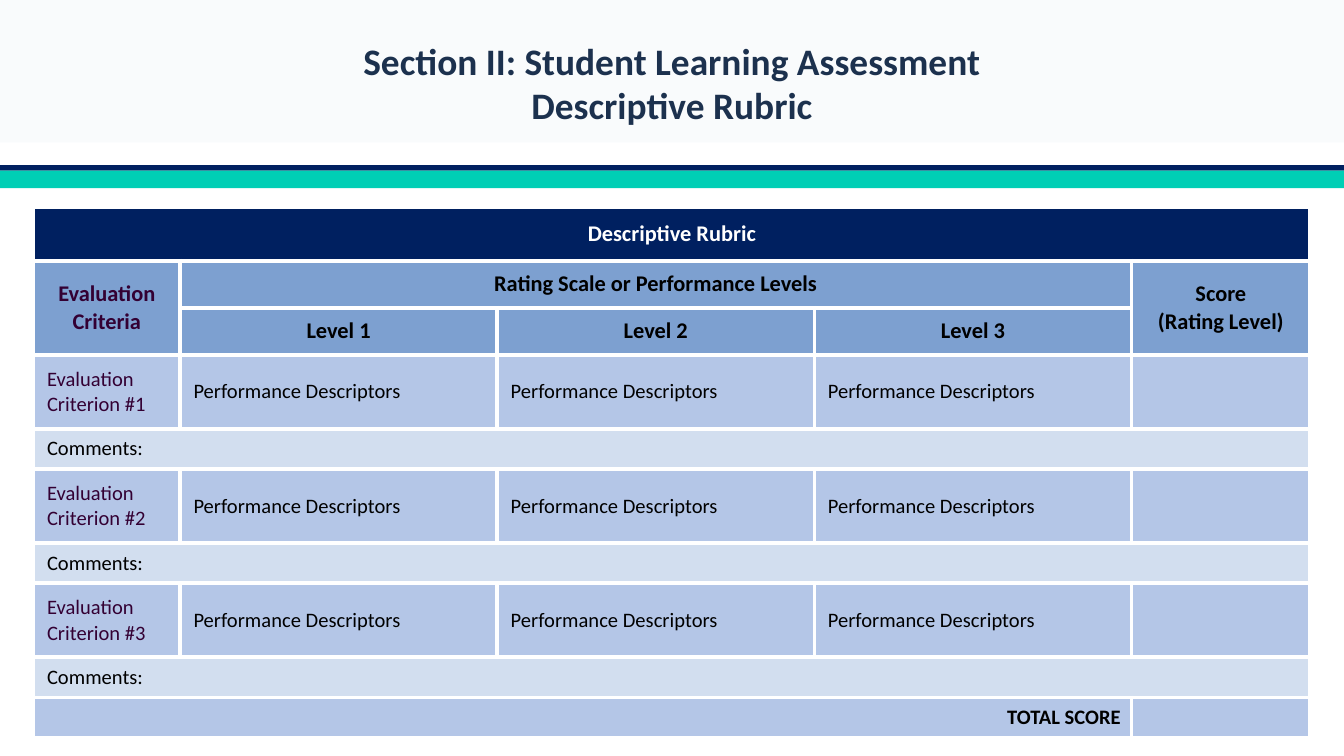
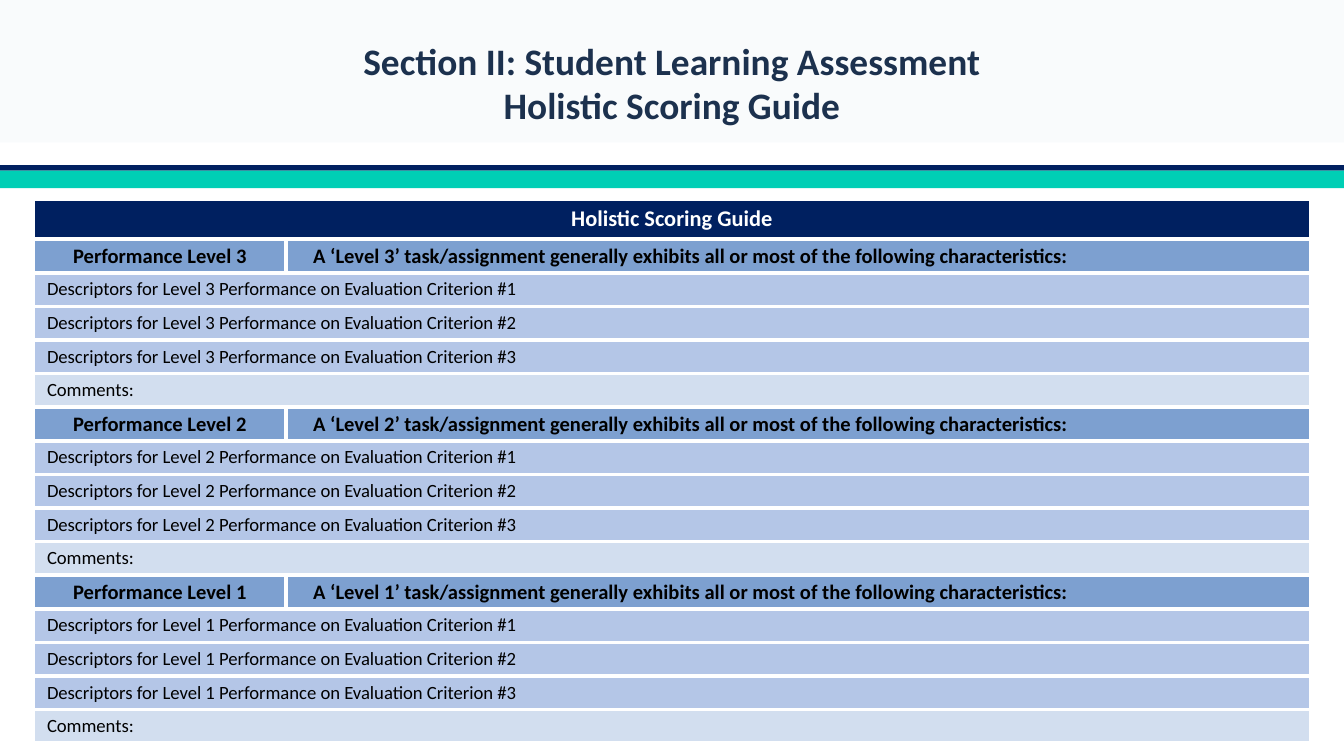
from dataclasses import dataclass
from lxml.etree import SubElement
from pptx import Presentation
from pptx.dml.color import RGBColor as RGB
from pptx.enum.shapes import MSO_SHAPE as SHAPE
from pptx.enum.text import MSO_ANCHOR as ANCHOR, PP_ALIGN as ALIGN
from pptx.oxml.ns import qn
from pptx.util import Inches, Pt


@dataclass(frozen=True)
class Theme:
    font: str = "Calibri"
    navy: str = "002060"
    teal: str = "00CFB5"
    mist: str = "E8F0F4"
    white: str = "FFFFFF"
    black: str = "000000"
    title: str = "1C314E"
    plum: str = "330033"
    head: str = "7DA0D0"
    body: str = "B4C6E7"
    note: str = "D2DEEF"
    title_size: int = 20
    head_size: int = 12
    body_size: int = 11
    small_size: int = 10
    border: float = 2.25


T = Theme()
HEAD_INS = (0.07, 0, 0.07, 0)
LABEL_INS = (0.1, 0, 0.08, 0)
DESC_INS = (0.05, 0.05, 0.05, 0.05)


def write(tf, text, size=T.body_size, color=T.black, bold=False, align=ALIGN.LEFT, indent=0):
    for i, line in enumerate(text.split("\n")):
        p = tf.add_paragraph() if i else tf.paragraphs[0]
        p.alignment = align
        if indent:
            p._p.get_or_add_pPr().set("marL", str(Inches(indent)))
        r = p.add_run()
        r.text = line
        r.font.name = T.font
        r.font.size = Pt(size)
        r.font.bold = bold
        r.font.color.rgb = RGB.from_string(color)


def fill_cell(cell, text, fill, ins=LABEL_INS, to=None, **fmt):
    if to is not None:
        cell.merge(to)
    cell.fill.solid()
    cell.fill.fore_color.rgb = RGB.from_string(fill)
    cell.vertical_anchor = ANCHOR.MIDDLE
    cell.margin_left, cell.margin_top, cell.margin_right, cell.margin_bottom = map(Inches, ins)
    write(cell.text_frame, text, **fmt)


prs = Presentation()
prs.slide_width = Inches(10)
prs.slide_height = Inches(10) * 9 // 16

bands = [
    (1.23, 0.23, T.navy, None),
    (1.27, 4.36, T.white, None),
    (1.27, 0.13, T.teal, None),
    (0, 1.06, T.mist, 25),
]
pages = [
    ("Descriptive Rubric", 1.54, [1.09] + [2.36] * 3 + [1.33],
     [0.4, 0.35, 0.35] + [0.55, 0.3] * 3 + [0.3]),
    ("Holistic Scoring Guide", 1.48, [1.88, 7.62], [0.3] + [0.25] * 15),
]
tables = []

for name, top, cols, rows in pages:
    s = prs.slides.add_slide(prs.slide_layouts[6])
    for y, h, color, alpha in bands:
        sp = s.shapes.add_shape(SHAPE.RECTANGLE, 0, Inches(y), Inches(10), Inches(h))
        sp.shadow.inherit = False
        sp.line.fill.background()
        sp.fill.solid()
        sp.fill.fore_color.rgb = RGB.from_string(color)
        if alpha:
            clr = sp._element.spPr.find(qn("a:solidFill"))[0]
            SubElement(clr, qn("a:alpha"), val=str(alpha * 1000))

    tbl = s.shapes.add_table(len(rows), len(cols), Inches(0.25), Inches(top),
                             Inches(sum(cols)), Inches(sum(rows))).table
    tbl.first_row = tbl.horz_banding = False
    for col, w in zip(tbl.columns, cols):
        col.width = Inches(w)
    for row, h in zip(tbl.rows, rows):
        row.height = Inches(h)
    for cell in tbl.iter_cells():
        tcPr = cell._tc.get_or_add_tcPr()
        for side in ("lnL", "lnR", "lnT", "lnB"):
            ln = SubElement(tcPr, qn(f"a:{side}"), w=str(Pt(T.border)))
            SubElement(SubElement(ln, qn("a:solidFill")), qn("a:srgbClr"), val=T.white)
    fill_cell(tbl.cell(0, 0), name, T.navy, HEAD_INS, tbl.cell(0, len(cols) - 1),
              size=T.head_size, color=T.white, bold=True, align=ALIGN.CENTER)
    tables.append(tbl)

    tf = s.shapes.add_textbox(0, 0, Inches(10), Inches(1.23)).text_frame
    tf.word_wrap = True
    tf.vertical_anchor = ANCHOR.MIDDLE
    tf.margin_left = tf.margin_top = tf.margin_right = tf.margin_bottom = 0
    write(tf, f"Section II: Student Learning Assessment\n{name}", size=T.title_size,
          color=T.title, bold=True, align=ALIGN.CENTER)

rubric, guide = tables

head = dict(size=T.head_size, bold=True, align=ALIGN.CENTER)
fill_cell(rubric.cell(1, 0), "Evaluation Criteria", T.head, HEAD_INS, rubric.cell(2, 0),
          color=T.plum, **head)
fill_cell(rubric.cell(1, 1), "Rating Scale or Performance Levels", T.head, HEAD_INS,
          rubric.cell(1, 3), **head)
fill_cell(rubric.cell(1, 4), "Score\n(Rating Level)", T.head, (0, 0, 0, 0),
          rubric.cell(2, 4), **head)
for level in (1, 2, 3):
    fill_cell(rubric.cell(2, level), f"Level {level}", T.head, HEAD_INS, **head)
for n in (1, 2, 3):
    row = 1 + 2 * n
    fill_cell(rubric.cell(row, 0), f"Evaluation Criterion #{n}", T.body, color=T.plum)
    for level in (1, 2, 3):
        fill_cell(rubric.cell(row, level), "Performance Descriptors", T.body, DESC_INS, indent=0.05)
    fill_cell(rubric.cell(row, 4), "", T.body)
    fill_cell(rubric.cell(row + 1, 0), "Comments:", T.note, to=rubric.cell(row + 1, 4))
fill_cell(rubric.cell(9, 0), "TOTAL SCORE", T.body, to=rubric.cell(9, 3),
          bold=True, align=ALIGN.RIGHT, indent=0.05)
fill_cell(rubric.cell(9, 4), "", T.body)

for i, level in enumerate((3, 2, 1)):
    row = 1 + 5 * i
    fill_cell(guide.cell(row, 0), f"Performance Level {level}", T.head, HEAD_INS,
              bold=True, align=ALIGN.CENTER)
    fill_cell(guide.cell(row, 1),
              f"A ‘Level {level}’ task/assignment generally exhibits all or most of the "
              "following characteristics:", T.head, (0.2, 0, 0, 0), bold=True)
    for n in (1, 2, 3):
        fill_cell(guide.cell(row + n, 0),
                  f"Descriptors for Level {level} Performance on Evaluation Criterion #{n}",
                  T.body, to=guide.cell(row + n, 1), size=T.small_size)
    fill_cell(guide.cell(row + 4, 0), "Comments:", T.note, to=guide.cell(row + 4, 1),
              size=T.small_size)

prs.save("out.pptx")
